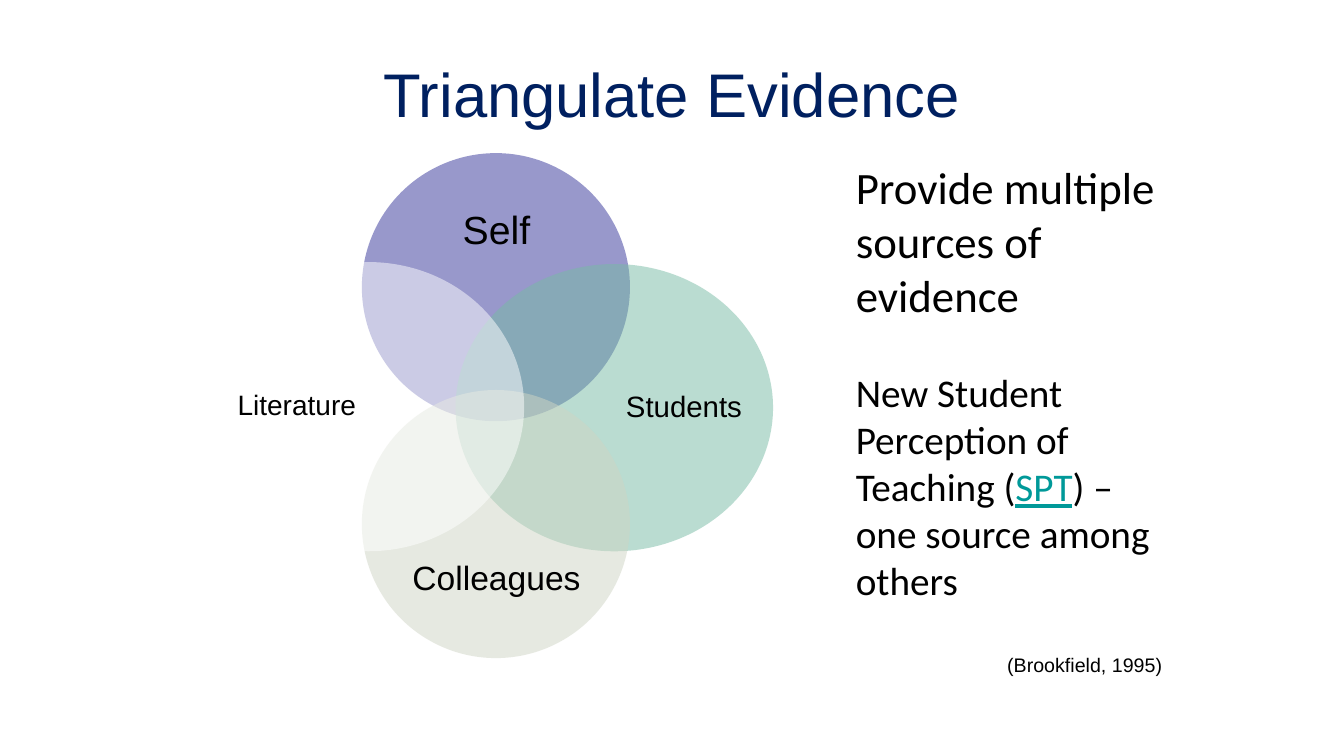
from lxml import etree
from pptx import Presentation
from pptx.dml.color import RGBColor
from pptx.enum.shapes import MSO_SHAPE
from pptx.enum.text import MSO_ANCHOR, PP_ALIGN
from pptx.oxml.ns import qn
from pptx.util import Pt

OVAL = MSO_SHAPE.OVAL
TOP, MIDDLE = MSO_ANCHOR.TOP, MSO_ANCHOR.MIDDLE
LEFT, CENTER, RIGHT = PP_ALIGN.LEFT, PP_ALIGN.CENTER, PP_ALIGN.RIGHT

COLORS = {
    "title": "002060", "text": "000000", "link": "009999",
    "self": "333399", "students": "77BBA4",
    "colleagues": "CFD5C4", "literature": "FFFFFF",
}

# Name, circle box, label box, label size, label alignment
VENN = [
    ("Self", (258.5, 109.4, 191.5, 191.5), (280.8, 135.4, 147.6, 60.5), 28, CENTER),
    ("Students", (325.4, 188.6, 226.8, 205.2), (447.1, 212.4, 87.1, 157.7), 21, LEFT),
    ("Colleagues", (258.5, 278.6, 191.5, 191.5), (280.8, 383.8, 147.6, 60.5), 24, CENTER),
    ("Literature", (151.9, 187.2, 222.5, 206.6), (169.2, 211, 85.7, 158.4), 20, CENTER),
]


def apply(item, style):
    for name, value in style.items():
        setattr(item, name, value)


def add_run(para, text, size, color="text", face="Arial", line=False):
    run = para.add_run()
    run.text = text
    apply(run.font, {"size": Pt(size), "name": face, "underline": line})
    run.font.color.rgb = RGBColor.from_string(COLORS[color])


def add_box(slide, box, anchor=MIDDLE, pads=(0, 0, 0, 0)):
    frame = slide.shapes.add_textbox(*map(Pt, box)).text_frame
    sides = ("margin_left", "margin_top", "margin_right", "margin_bottom")
    apply(frame, {"word_wrap": True, "vertical_anchor": anchor})
    apply(frame, dict(zip(sides, map(Pt, pads))))
    return frame


def add_label(slide, text, box, size, align, color="text", pitch=0.9):
    para = add_box(slide, box).paragraphs[0]
    apply(para, {"alignment": align, "line_spacing": pitch})
    add_run(para, text, size, color)


def add_circle(slide, box, color):
    shape = slide.shapes.add_shape(OVAL, *map(Pt, box))
    shape.shadow.inherit = False
    shape.fill.solid()
    shape.fill.fore_color.rgb = RGBColor.from_string(COLORS[color])
    shape.line.fill.background()
    # Half transparent, so that overlaps show
    tint = shape.fill._xPr.find(qn("a:solidFill"))[0]
    etree.SubElement(tint, qn("a:alpha"), val="50000")


def add_notes(slide):
    frame = add_box(slide, (576.7, 110.9, 260.6, 385.9), TOP, (34.6, 3.6, 7.2, 3.6))

    # Main message
    para = frame.paragraphs[0]
    add_run(para, "Provide multiple sources of evidence", 32, face="Calibri")

    # Example with a marked term
    para = frame.add_paragraph()
    para.space_before = Pt(33.5)
    for text, color, line in [
        ("New Student Perception of Teaching (", "text", False),
        ("SPT", "link", True),
        (") – one source among others", "text", False),
    ]:
        add_run(para, text, 28, color, "Calibri", line)

    # Citation
    para = frame.add_paragraph()
    apply(para, {"alignment": RIGHT, "space_before": Pt(35)})
    add_run(para, "(Brookfield, 1995)", 14)


def main():
    deck = Presentation()
    apply(deck, {"slide_width": Pt(960), "slide_height": Pt(540)})
    slide = deck.slides.add_slide(deck.slide_layouts[6])

    # Title
    add_label(slide, "Triangulate Evidence", (48, 21.6, 864, 90), 44, CENTER, "title", 1.0)

    # Overlapping circles, from back to front
    for name, circle, box, size, align in VENN:
        add_circle(slide, circle, name.lower())
        add_label(slide, name, box, size, align)

    # Text on the right
    add_notes(slide)
    deck.save("out.pptx")


if __name__ == "__main__":
    main()
